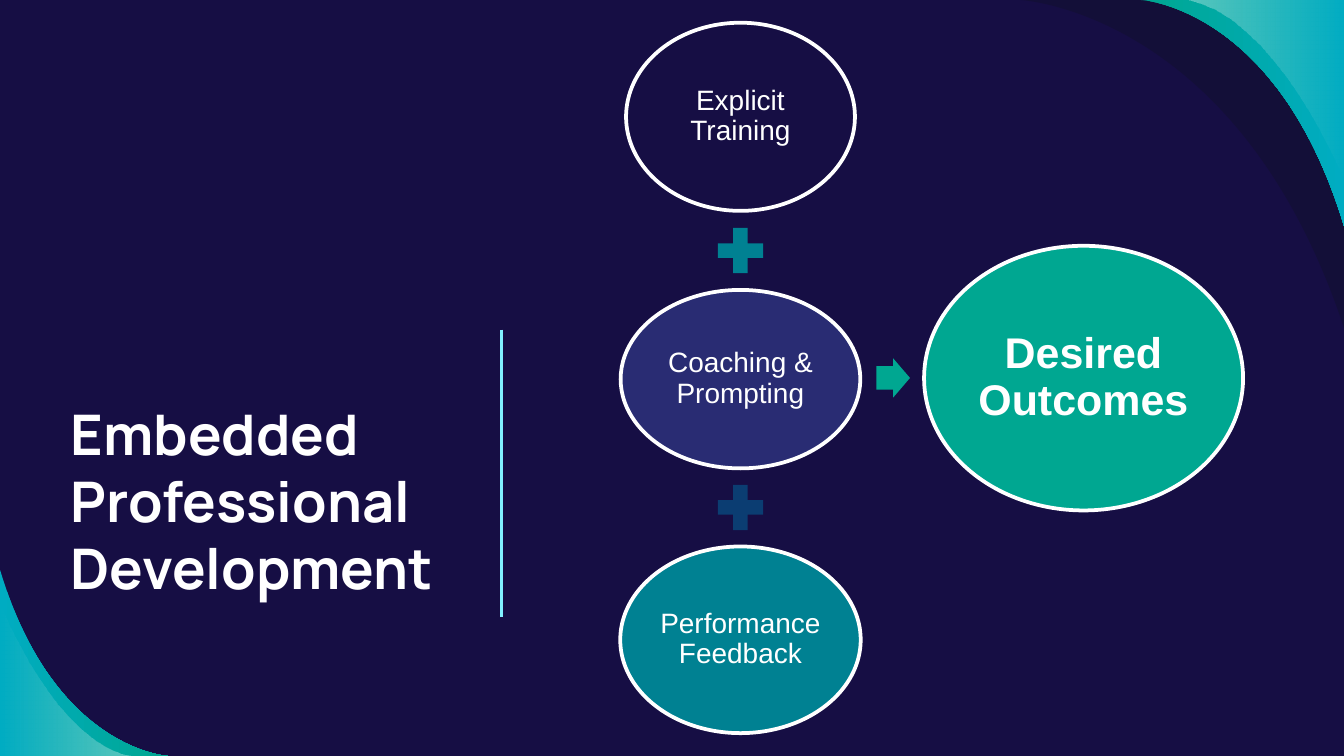
from pptx import Presentation
from pptx.dml.color import RGBColor
from pptx.enum import shapes, text
from pptx.oxml.ns import qn
from pptx.util import Pt
from lxml import etree

HUES = {
    "night": "160E44", "shade": "12102F", "indigo": "292C73",
    "navy": "0B3D72", "teal": "008192", "green": "00A791",
    "cyan": "00ACC2", "sky": "81F1FF", "white": "FFFFFF",
}
RGB = {name: RGBColor.from_string(code) for name, code in HUES.items()}
KIND = shapes.MSO_SHAPE

deck = Presentation()
deck.slide_width, deck.slide_height = Pt(720), Pt(405)
slide = deck.slides.add_slide(deck.slide_layouts[5])
slide.background.fill.solid()
slide.background.fill.fore_color.rgb = RGB["night"]
items = slide.shapes


def write(shape, words, size, font="Arial", bold=False, align="CENTER",
          anchor="MIDDLE", inset=1.5, space=0.9):
    frame = shape.text_frame
    frame.word_wrap = True
    frame.auto_size = text.MSO_AUTO_SIZE.NONE
    frame.vertical_anchor = text.MSO_ANCHOR[anchor]
    frame.margin_left = frame.margin_right = Pt(inset)
    frame.margin_top = frame.margin_bottom = Pt(inset)
    para = frame.paragraphs[0]
    para.text = words
    para.alignment = text.PP_ALIGN[align]
    para.line_spacing = space
    for run in para.runs:
        run.font.name, run.font.size, run.font.bold = font, Pt(size), bold
        run.font.color.rgb = RGB["white"]


def place(kind, box, hue, edge=False):
    shape = items.add_shape(kind, *map(Pt, box))
    shape.shadow.inherit = False
    shape.fill.solid()
    shape.fill.fore_color.rgb = RGB[hue]
    if edge:
        shape.line.color.rgb = RGB["white"]
        shape.line.width = Pt(2)
    else:
        shape.line.fill.background()
    return shape


# Corner waves: Bezier curve, corner, then (hue, opacity) from left to right
base = [("cyan", 100), ("green", 100)]
gloss = [("white", 0), ("white", 36)]
waves = [
    ([(90, 405), (90, 405), (28.8, 402), (0, 305.2)], (0, 405), base),
    ([(0, 324), (0, 324), (30.2, 400.3), (71.3, 405)], (0, 405), gloss),
    ([(720, 175.7), (663.8, 5.8), (546.5, 0), (546.5, 0)], (720, 0),
     [("shade", 54)]),
    ([(611.3, 0), (611.3, 0), (684.7, 3.6), (720, 121)], (720, 0), base[::-1]),
    ([(720, 97.2), (720, 97.2), (683.3, 5.8), (633.6, 0)], (720, 0),
     gloss[::-1]),
]
for curve, corner, tints in waves:
    dots = [[Pt(v) for v in dot] for dot in curve + [corner]]
    pen = items.build_freeform(*dots[0], scale=1)
    pen.add_line_segments(dots[1:], close=True)
    wave = pen.convert_to_shape()

    # Join the first three segments into one cubic curve
    lines = list(wave._element.spPr.iter(qn("a:lnTo")))[:3]
    bend = etree.Element(qn("a:cubicBezTo"))
    lines[0].addprevious(bend)
    for line in lines:
        bend.append(line[0])
        line.getparent().remove(line)

    wave.shadow.inherit = False
    wave.line.fill.background()
    if len(tints) == 1:
        wave.fill.solid()
        wave.fill.fore_color.rgb = RGB[tints[0][0]]
    else:
        wave.fill.gradient()
        wave.fill.gradient_angle = 0
        for stop, (hue, _) in zip(wave.fill.gradient_stops, tints):
            stop.color.rgb = RGB[hue]
    marks = list(wave._element.spPr.iter(qn("a:srgbClr")))
    for mark, (_, alpha) in zip(marks, tints):
        if alpha < 100:
            etree.SubElement(mark, qn("a:alpha"), val=str(alpha * 1000))

title = items.title
title.left, title.top, title.width, title.height = map(Pt, (30.6, 206.6, 237.6, 155.5))
write(title, "Embedded \vProfessional \vDevelopment", 30, font="Manrope",
      bold=True, align="LEFT", anchor="TOP", inset=7.2, space=1.0)

# Ovals: words, centre, top, width, height, hue, size, bold
MID = 396.7
INNER = 0.707
for words, centre, top, wide, high, hue, size, bold in [
    ("Explicit Training", MID, 12.2, 122.6, 100.8, "night", 15, False),
    ("Coaching & Prompting", MID, 155.3, 128.4, 95.6, "indigo", 15, False),
    ("Performance Feedback", MID, 292.8, 128.8, 100, "teal", 15, False),
    ("Desired Outcomes", 580.5, 131.7, 170.9, 141.8, "green", 23, True),
]:
    place(KIND.OVAL, (centre - wide / 2, top, wide, high), hue, edge=True)
    label = items.add_textbox(
        Pt(centre - wide * INNER / 2), Pt(top + high * (1 - INNER) / 2),
        Pt(wide * INNER), Pt(high * INNER))
    write(label, words, size, bold=bold, inset=size / 10)

PLUS = 33
for top, hue in [(117.8, "teal"), (255.4, "navy")]:
    place(KIND.MATH_PLUS, (MID - PLUS / 2, top, PLUS, PLUS), hue)

arrow = place(KIND.RIGHT_ARROW, (469.5, 192, 18, 21), "green")
arrow.adjustments[0], arrow.adjustments[1] = 0.6, 0.5

rule = items.add_connector(shapes.MSO_CONNECTOR.STRAIGHT,
                           Pt(268.6), Pt(176.6), Pt(268.6), Pt(330.5))
rule.line.color.rgb = RGB["sky"]
rule.line.width = Pt(1.5)
etree.SubElement(rule._element.spPr, qn("a:effectLst"))

deck.save("out.pptx")
